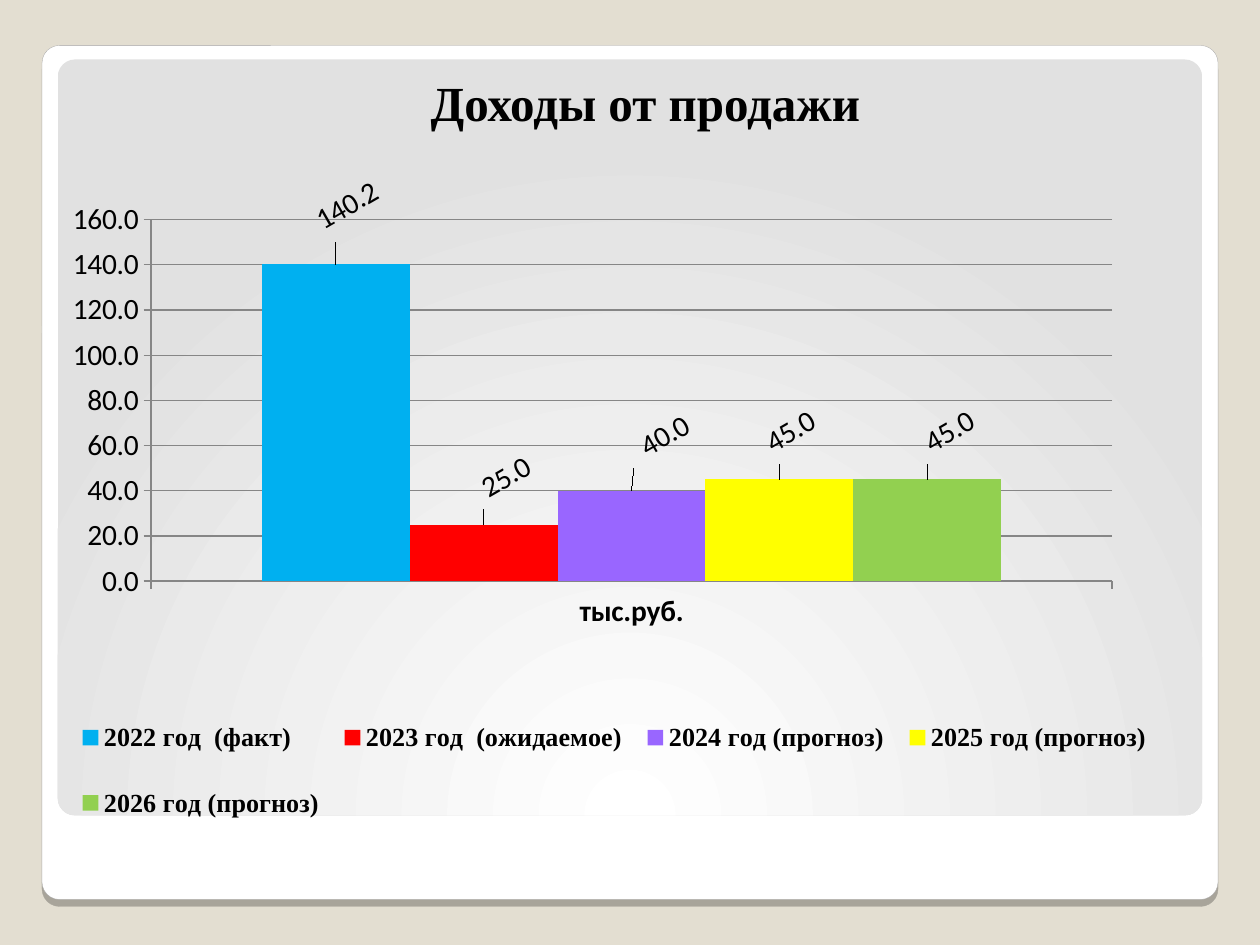
import pptx
import pptx.chart.data
import pptx.dml.color
import pptx.enum.chart
import pptx.enum.shapes
import pptx.enum.text
import pptx.oxml
import pptx.oxml.ns
import pptx.util
from pptx.util import Pt

# Content
TITLE = "Доходы от продажи"
CATEGORY = "тыс.руб."
# name, value, colour, label shift as a share of the chart (x, y)
YEARS = [
    ("2022 год  (факт) ", 140.2, "00B0F0", (0.01, -0.03)),
    ("2023 год  (ожидаемое)", 25, "FF0000", (0.02, -0.02)),
    ("2024 год (прогноз)", 40, "9966FF", (0.03, -0.03)),
    ("2025 год (прогноз)", 45, "FFFF00", (0.01, -0.02)),
    ("2026 год (прогноз)", 45, "92D050", (0.02, -0.02)),
]
THEME = {
    "background": "E3DED1", "card": "FFFFFF", "card_line": "A4A3A3",
    "panel": ("FFFFFF", "E1E1E1"), "text": "000000", "grid": "868686",
    "title_font": "Times New Roman", "chart_font": "Calibri",
    "title_size": 28, "chart_size": 16.8, "legend_size": 14.9,
}
NUMBER_FORMAT = "0.0"
LABEL_ANGLE = -30

# Places in points: left, top, width, height
SLIDE_SIZE = (720, 540)
CARD = (24, 26, 672, 488)
PANEL = (33, 34, 654, 432)
TITLE_BOX = (34, 16.5, 669.5, 62)
CHART_BOX = (37.5, 94.5, 633.5, 414)
CORNER = 10
# Shares of the chart: x, y, width, height
PLOT_AREA = (0.077, 0.075, 0.867, 0.499)
LEGEND_AREA = (0, 0.72, 0.99, 0.23)


def rgb(value):
    return pptx.dml.color.RGBColor.from_string(value)


def xml(text):
    return pptx.oxml.parse_xml(text.replace(
        ">", " " + pptx.oxml.ns.nsdecls("a", "c") + ">", 1)
        if not text.split(">")[0].endswith("/") else text.replace(
        "/>", " " + pptx.oxml.ns.nsdecls("a", "c") + "/>", 1))


def layout_xml(area, fixed=True):
    modes = '<c:xMode val="edge"/><c:yMode val="edge"/>' if fixed else ""
    values = "".join(f'<c:{k} val="{v}"/>' for k, v in zip("xywh", area))
    return f"<c:layout><c:manualLayout>{modes}{values}</c:manualLayout></c:layout>"


def style_font(font, name, size, bold=False):
    font.name, font.size, font.bold = name, Pt(size), bold
    font.color.rgb = rgb(THEME["text"])


def add_rounded(slide, box):
    shape = slide.shapes.add_shape(
        pptx.enum.shapes.MSO_SHAPE.ROUNDED_RECTANGLE, *map(Pt, box))
    shape.adjustments[0] = CORNER / min(box[2:])
    shape.shadow.inherit = False
    return shape


def add_frame(slide):
    # White card with a hard shadow below
    card = add_rounded(slide, CARD)
    card.fill.solid()
    card.fill.fore_color.rgb = rgb(THEME["card"])
    card.line.color.rgb = rgb(THEME["card_line"])
    card.line.width = Pt(0.16)
    effects = card._element.spPr.find(pptx.oxml.ns.qn("a:effectLst"))
    effects.append(xml(
        f'<a:outerShdw blurRad="0" dist="{Pt(4)}" dir="5400000" rotWithShape="0">'
        '<a:srgbClr val="000000"><a:alpha val="25000"/></a:srgbClr></a:outerShdw>'))

    # Inner panel with a radial gradient rising from the bottom
    panel = add_rounded(slide, PANEL)
    panel.line.fill.background()
    panel.fill.gradient()
    for stop, position, colour in zip(panel.fill.gradient_stops, (0, 1), THEME["panel"]):
        stop.position = position
        stop.color.rgb = rgb(colour)
    gradient = panel._element.spPr.find(pptx.oxml.ns.qn("a:gradFill"))
    gradient.replace(gradient.find(pptx.oxml.ns.qn("a:lin")), xml(
        '<a:path path="circle">'
        '<a:fillToRect l="50000" t="175000" r="50000" b="-75000"/></a:path>'))


def place_title(slide):
    title = slide.shapes.title
    title.left, title.top, title.width, title.height = map(Pt, TITLE_BOX)
    frame = title.text_frame
    frame.text = TITLE
    frame.vertical_anchor = pptx.enum.text.MSO_ANCHOR.BOTTOM
    paragraph = frame.paragraphs[0]
    paragraph.alignment = pptx.enum.text.PP_ALIGN.CENTER
    style_font(paragraph.runs[0].font, THEME["title_font"], THEME["title_size"], True)
    slide.shapes._spTree.append(title._element)  # in front of the frame


def style_series(series, colour, shift):
    series.format.fill.solid()
    series.format.fill.fore_color.rgb = rgb(colour)
    series.invert_if_negative = False
    labels = series.data_labels
    labels.show_value = True
    labels.number_format = NUMBER_FORMAT
    labels.number_format_is_linked = False
    label = series.points[0].data_label
    style_font(label.font, THEME["chart_font"], THEME["chart_size"])
    label.position = pptx.enum.chart.XL_LABEL_POSITION.OUTSIDE_END
    element = label._dLbl
    element.insert(1, xml(layout_xml(shift, fixed=False)))
    element.insert(2, xml(f'<c:numFmt formatCode="{NUMBER_FORMAT}" sourceLinked="0"/>'))
    body = element.find(".//" + pptx.oxml.ns.qn("a:bodyPr"))
    body.set("rot", str(LABEL_ANGLE * 60000))
    body.set("vert", "horz")


def add_income_chart(slide):
    data = pptx.chart.data.CategoryChartData(number_format=NUMBER_FORMAT)
    data.categories = [CATEGORY]
    for name, value, *_ in YEARS:
        data.add_series(name, [value])
    chart = slide.shapes.add_chart(
        pptx.enum.chart.XL_CHART_TYPE.COLUMN_CLUSTERED, *map(Pt, CHART_BOX), data).chart
    chart.has_title = False
    style_font(chart.font, THEME["chart_font"], THEME["chart_size"])

    # Columns
    plot = chart.plots[0]
    plot.gap_width, plot.overlap, plot.vary_by_categories = 150, 0, False
    for series, (_, _, colour, shift) in zip(plot.series, YEARS):
        style_series(series, colour, shift)

    # Axes
    values, categories = chart.value_axis, chart.category_axis
    values.minimum_scale, values.maximum_scale, values.major_unit = 0, 160, 20
    values.tick_labels.number_format = NUMBER_FORMAT
    values.tick_labels.number_format_is_linked = False
    values.has_major_gridlines = True
    style_font(categories.tick_labels.font, THEME["chart_font"], THEME["chart_size"], True)
    for axis in (values, categories):
        axis.major_tick_mark = pptx.enum.chart.XL_TICK_MARK.OUTSIDE
    for part in (values, categories, values.major_gridlines):
        part.format.line.color.rgb = rgb(THEME["grid"])
        part.format.line.width = Pt(0.75)

    # Legend
    chart.has_legend = True
    legend = chart.legend
    legend.position = pptx.enum.chart.XL_LEGEND_POSITION.RIGHT
    legend.include_in_layout = False
    style_font(legend.font, THEME["title_font"], THEME["legend_size"], True)

    # Fixed places for the plot and the legend
    plot_area = chart._chartSpace.chart.plotArea
    for parent in (plot_area, legend._element):
        for old in parent.findall(pptx.oxml.ns.qn("c:layout")):
            parent.remove(old)
    plot_layout = xml(layout_xml(PLOT_AREA))
    plot_layout[0].insert(0, xml('<c:layoutTarget val="inner"/>'))
    plot_area.insert(0, plot_layout)
    legend._element.insert(1, xml(layout_xml(LEGEND_AREA)))


def main():
    deck = pptx.Presentation()
    deck.slide_width, deck.slide_height = map(Pt, SLIDE_SIZE)
    slide = deck.slides.add_slide(deck.slide_layouts[5])
    slide.background.fill.solid()
    slide.background.fill.fore_color.rgb = rgb(THEME["background"])
    add_frame(slide)
    place_title(slide)
    add_income_chart(slide)
    deck.save("out.pptx")


if __name__ == "__main__":
    main()
